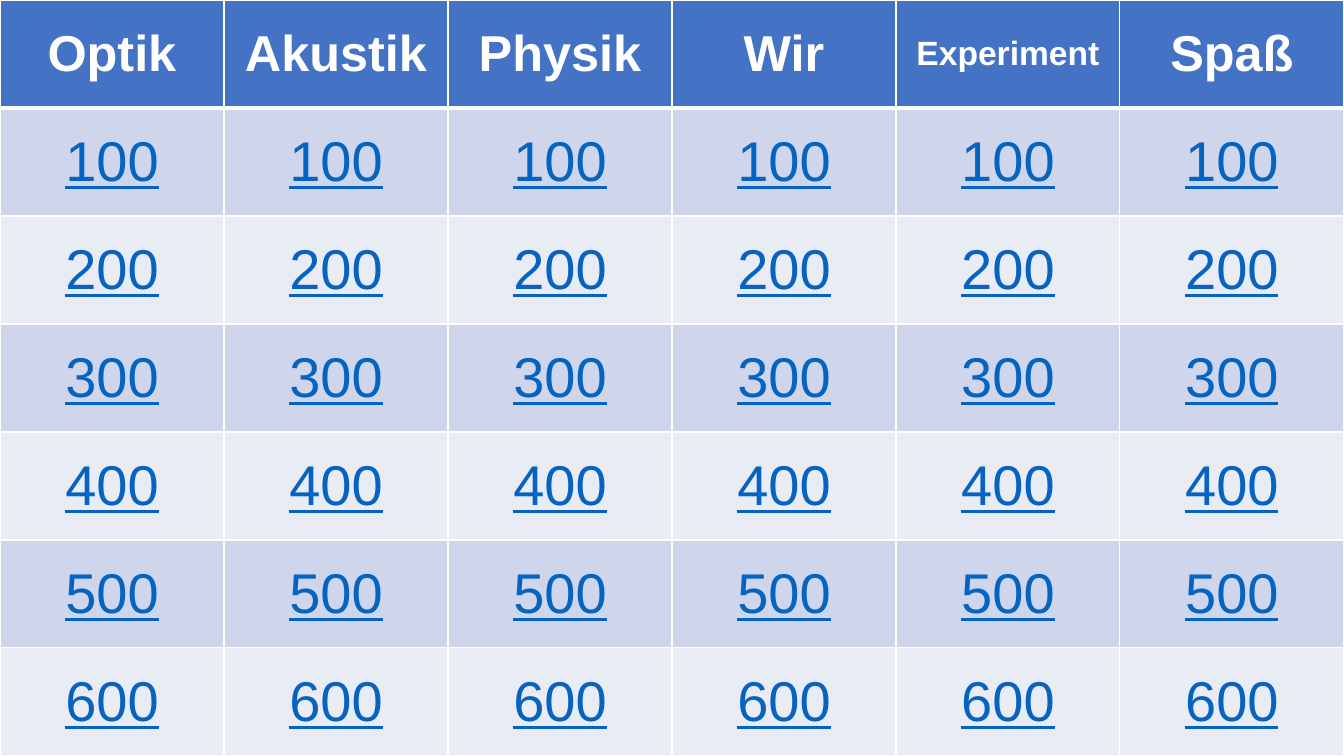
from lxml import etree
from pptx import Presentation
from pptx.dml.color import RGBColor
from pptx.enum import text
from pptx.oxml import ns
from pptx.util import Pt

WHITE = RGBColor(0xFF, 0xFF, 0xFF)
HEAD = RGBColor(0x44, 0x72, 0xC4)
LINK = RGBColor(0x05, 0x63, 0xC1)
BANDS = [RGBColor(0xE9, 0xEB, 0xF5), RGBColor(0xCF, 0xD5, 0xEA)]

WIDTH, HEIGHT = 960, 540
TOPICS = ["Optik", "Akustik", "Physik", "Wir", "Experiment", "Spaß"]
POINTS = [100, 200, 300, 400, 500, 600]


def edge(cell, side, width):
    """Draw one white cell border; side is L, R, T or B."""
    line = etree.SubElement(cell._tc.get_or_add_tcPr(), ns.qn("a:ln" + side), w=str(Pt(width)))
    fill = etree.SubElement(line, ns.qn("a:solidFill"))
    etree.SubElement(fill, ns.qn("a:srgbClr"), val=str(WHITE))


deck = Presentation()
deck.slide_width, deck.slide_height = Pt(WIDTH), Pt(HEIGHT)
slide = deck.slides.add_slide(deck.slide_layouts[6])

grid = [TOPICS] + [[str(value)] * len(TOPICS) for value in POINTS]
board = slide.shapes.add_table(
    len(grid), len(TOPICS), Pt(0), Pt(0), Pt(WIDTH), Pt(HEIGHT)
).table

for r, words in enumerate(grid):
    head = r == 0
    for c, word in enumerate(words):
        cell = board.cell(r, c)
        cell.text = word
        cell.vertical_anchor = text.MSO_ANCHOR.MIDDLE

        para = cell.text_frame.paragraphs[0]
        para.alignment = text.PP_ALIGN.CENTER
        font = para.font
        font.name = "Arial"
        font.bold = head
        font.underline = not head
        font.color.rgb = WHITE if head else LINK
        font.size = Pt(36 if head else 40)
        if word == "Experiment":
            font.size = Pt(24)

        # Borders come before the fill in the cell's XML
        edge(cell, "L", 1)
        edge(cell, "R", 1)
        edge(cell, "T", 3 if r == 1 else 1)
        edge(cell, "B", 3 if head else 1)
        cell.fill.solid()
        cell.fill.fore_color.rgb = HEAD if head else BANDS[r % 2]

deck.save("out.pptx")
